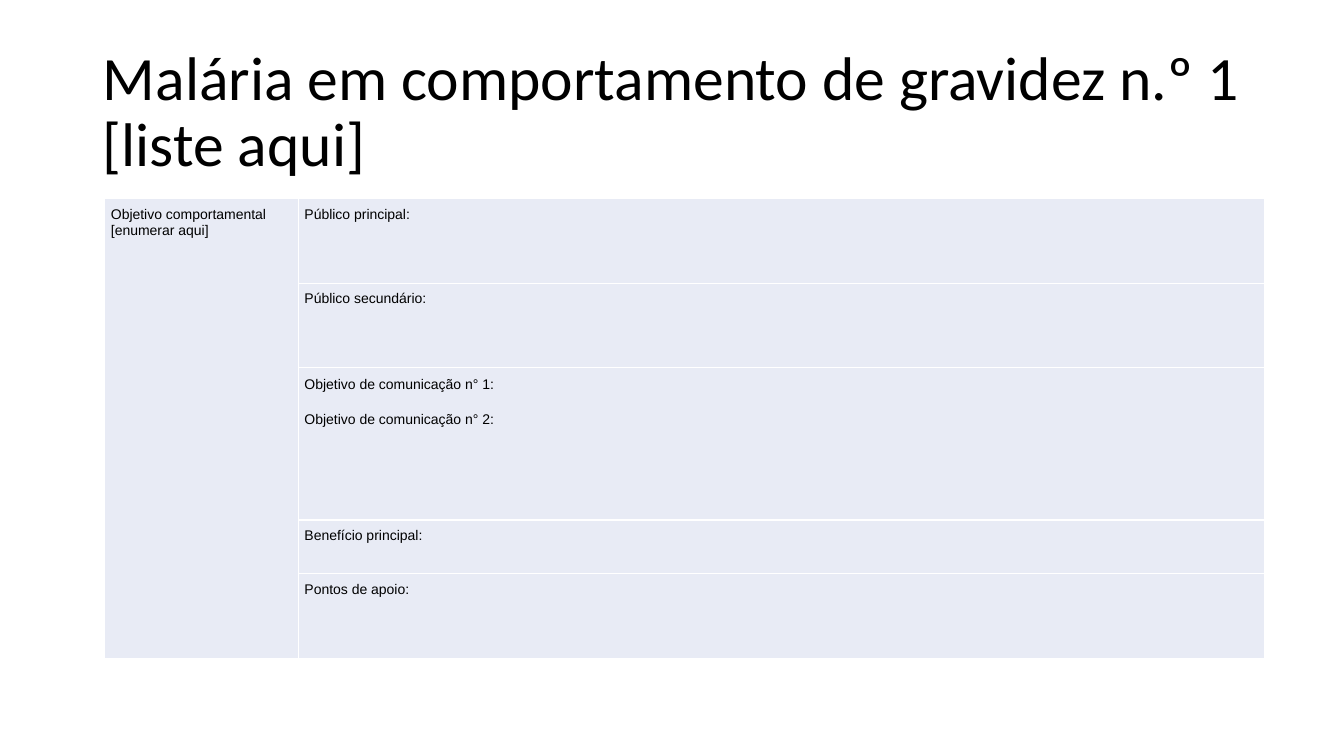
from dataclasses import dataclass

from lxml import etree
from pptx import Presentation
from pptx.dml.color import RGBColor
from pptx.enum import text
from pptx.oxml import ns
from pptx.util import Inches, Pt


@dataclass(frozen=True)
class Theme:
    title_font: str = "Calibri"
    body_font: str = "Arial"
    title_size: int = 44
    body_size: int = 10
    ink: str = "000000"
    cell_fill: str = "E8EBF5"
    border: str = "FFFFFF"
    border_width: int = 1


class SlideBuilder:
    def __init__(self, prs, theme):
        self.theme = theme
        self.s = prs.slides.add_slide(prs.slide_layouts[5])

    def style(self, p, font, size, spacing):
        p.alignment = text.PP_ALIGN.LEFT
        p.line_spacing = spacing
        p.font.name = font
        p.font.size = Pt(size)
        p.font.color.rgb = RGBColor.from_string(self.theme.ink)

    def title(self, wording, left, top, width, height):
        sp = self.s.shapes.title
        sp.left, sp.top, sp.width, sp.height = map(Inches, (left, top, width, height))
        tf = sp.text_frame
        tf.text = wording
        tf.word_wrap = True
        tf.auto_size = text.MSO_AUTO_SIZE.NONE
        tf.vertical_anchor = text.MSO_ANCHOR.MIDDLE
        self.style(tf.paragraphs[0], self.theme.title_font, self.theme.title_size, 0.9)

    def borders(self, cell):
        tc_pr = cell._tc.get_or_add_tcPr()
        for side in ("a:lnL", "a:lnR", "a:lnT", "a:lnB"):
            ln = etree.SubElement(tc_pr, ns.qn(side), w=str(Pt(self.theme.border_width)))
            fill = etree.SubElement(ln, ns.qn("a:solidFill"))
            etree.SubElement(fill, ns.qn("a:srgbClr"), val=self.theme.border)

    def cell(self, cell, lines=(), spacing=1.06, gap=0):
        self.borders(cell)
        cell.fill.solid()
        cell.fill.fore_color.rgb = RGBColor.from_string(self.theme.cell_fill)
        cell.margin_left, cell.margin_right = Inches(0.06), Inches(0.04)
        cell.margin_top = cell.margin_bottom = Inches(0.07)
        tf = cell.text_frame
        tf.text = "\n".join(lines)
        for i, p in enumerate(tf.paragraphs):
            self.style(p, self.theme.body_font, self.theme.body_size, spacing)
            p.space_before = Pt(gap if i else 0)

    def table(self, heading, rows, left, top, widths, heights):
        frame = self.s.shapes.add_table(
            len(heights), len(widths), Inches(left), Inches(top),
            Inches(sum(widths)), Inches(sum(heights)))
        table = frame.table
        table.first_row = table.horz_banding = False
        for column, width in zip(table.columns, widths):
            column.width = Inches(width)
        for i, (height, options) in enumerate(zip(heights, rows)):
            table.rows[i].height = Inches(height)
            self.cell(table.cell(i, 0), [heading] if i == 0 else [])
            self.cell(table.cell(i, 1), **options)
        # The behavioural objective spans every row
        table.cell(0, 0).merge(table.cell(len(heights) - 1, 0))


def main():
    prs = Presentation()
    prs.slide_width, prs.slide_height = Inches(13.33), Inches(7.5)
    slide = SlideBuilder(prs, Theme())

    # Title
    slide.title("Malária em comportamento de gravidez n.º 1 [liste aqui]",
                0.92, 0.4, 11.5, 1.45)

    # Strategy table
    objectives = [f"Objetivo de comunicação n° {n}:" for n in (1, 2)]
    rows = [
        {"lines": ["Público principal:"]},
        {"lines": ["Público secundário:"]},
        {"lines": objectives, "spacing": 1.15, "gap": 12},
        {"lines": ["Benefício principal:"]},
        {"lines": ["Pontos de apoio:"]},
    ]
    slide.table("Objetivo comportamental [enumerar aqui]", rows, 1.04, 1.97,
                widths=[1.92, 9.58], heights=[0.84, 0.84, 1.51, 0.53, 0.84])

    prs.save("out.pptx")


if __name__ == "__main__":
    main()
